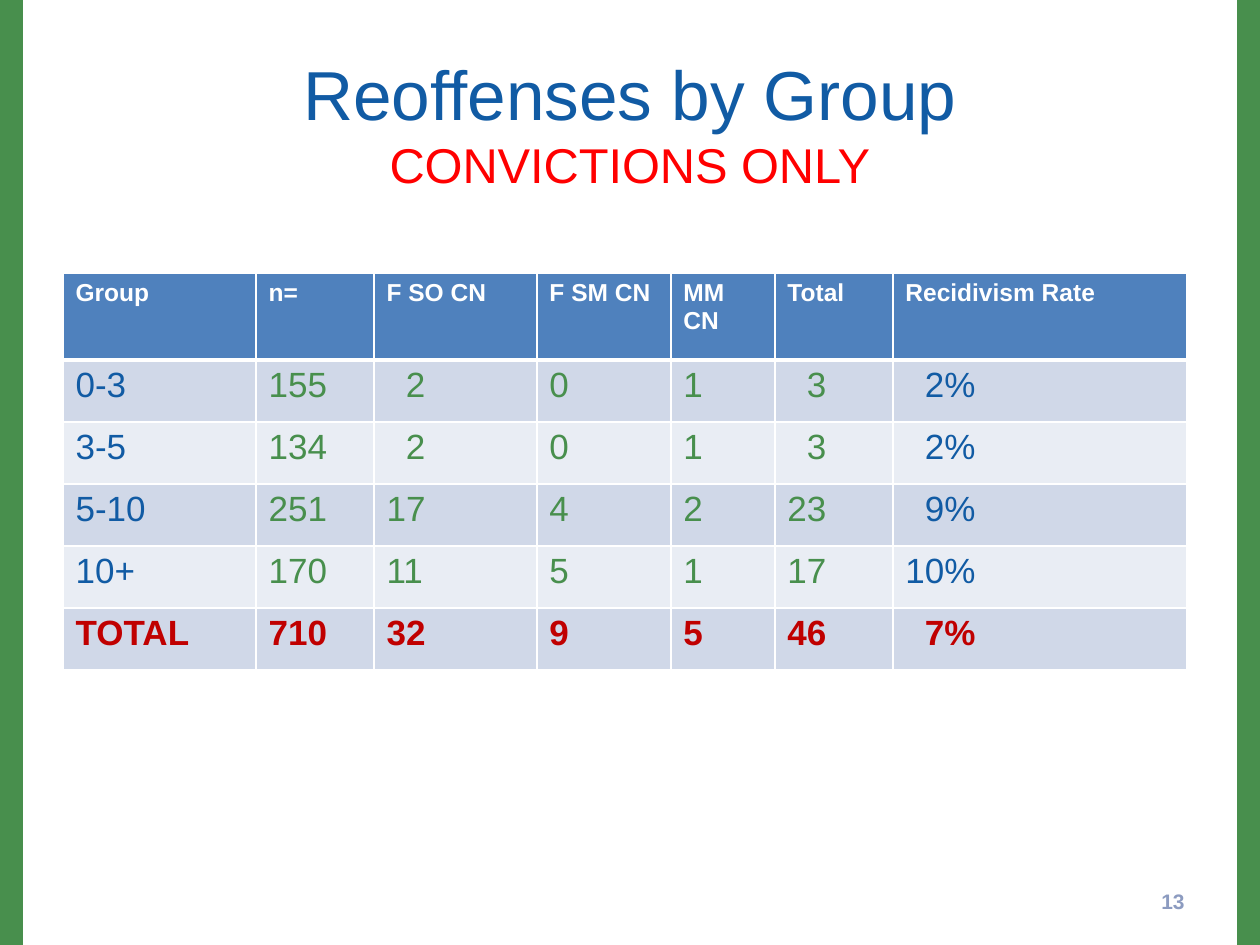
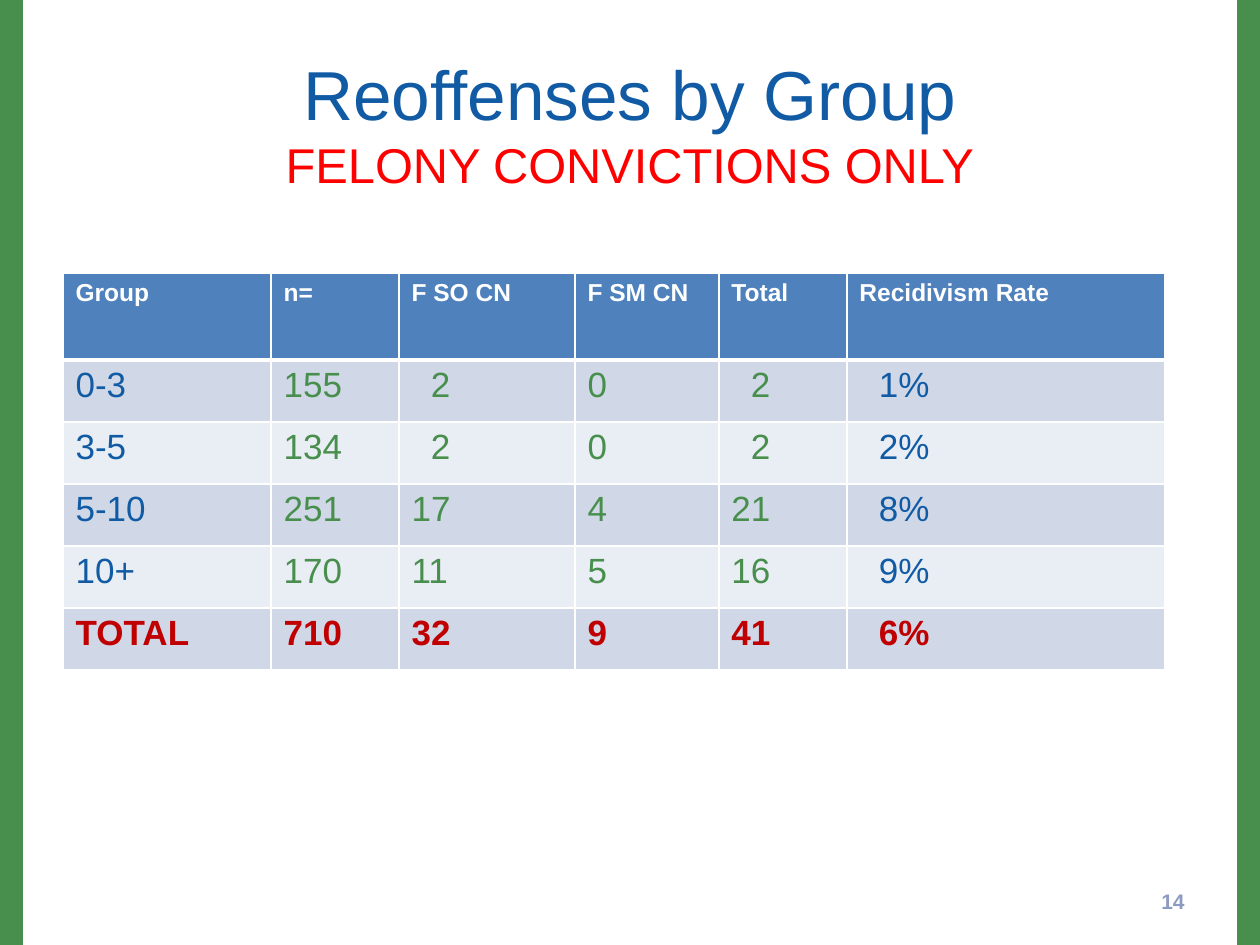
from dataclasses import dataclass

from lxml.etree import SubElement as Sub
from pptx import Presentation as Deck
from pptx.dml.color import RGBColor as RGB
from pptx.enum.shapes import MSO_SHAPE as Kind
from pptx.enum.text import MSO_ANCHOR as Anchor, MSO_AUTO_SIZE as Fit, PP_ALIGN as Align
from pptx.oxml.ns import qn
from pptx.util import Emu, Pt

SCALE = 914400 / 126
WIDE, HIGH = 1260, 945
FONT = "Arial"
COLORS = {
    "green": "488F4D",
    "blue": "115BA4",
    "red": "FF0000",
    "dark": "C00000",
    "head": "4F81BD",
    "odd": "D0D8E8",
    "even": "E9EDF4",
    "white": "FFFFFF",
    "page": "8C9BC0",
}
LEFT, TOP = 63, 273
HEAD_H, ROW_H = 87, 62
BAND = 21
INDENT = 32
PADDED = {"F SO CN", "Total", "Recidivism Rate"}


@dataclass(frozen=True)
class Page:
    num: int
    sub: str
    cols: tuple[int, ...]
    rows: tuple[tuple[str, ...], ...]


PAGES = (
    Page(13, "CONVICTIONS ONLY", (193, 118, 163, 134, 104, 118, 294), (
        ("Group", "n=", "F SO CN", "F SM CN", "MM CN", "Total", "Recidivism Rate"),
        ("0-3", "155", "2", "0", "1", "3", "2%"),
        ("3-5", "134", "2", "0", "1", "3", "2%"),
        ("5-10", "251", "17", "4", "2", "23", "9%"),
        ("10+", "170", "11", "5", "1", "17", "10%"),
        ("TOTAL", "710", "32", "9", "5", "46", "7%"),
    )),
    Page(14, "FELONY CONVICTIONS ONLY", (208, 128, 176, 144, 128, 318), (
        ("Group", "n=", "F SO CN", "F SM CN", "Total", "Recidivism Rate"),
        ("0-3", "155", "2", "0", "2", "1%"),
        ("3-5", "134", "2", "0", "2", "2%"),
        ("5-10", "251", "17", "4", "21", "8%"),
        ("10+", "170", "11", "5", "16", "9%"),
        ("TOTAL", "710", "32", "9", "41", "6%"),
    )),
)


def px(size: int) -> Emu:
    return Emu(round(size * SCALE))


def tint(name: str) -> RGB:
    return RGB.from_string(COLORS[name])


def style(font, size: float, color: str, bold: bool = False) -> None:
    font.name = FONT
    font.size = Pt(size)
    font.bold = bold
    font.color.rgb = tint(color)


def add_bands(slide) -> None:
    for left in (0, WIDE - BAND):
        band = slide.shapes.add_shape(Kind.RECTANGLE, px(left), 0, px(BAND), px(HIGH))
        band.shadow.inherit = False
        band.fill.solid()
        band.fill.fore_color.rgb = tint("green")
        band.line.color.rgb = tint("green")
        band.line.width = Pt(2)


def add_title(slide, sub: str) -> None:
    title = slide.shapes.title
    title.left, title.top = px(LEFT), px(38)
    title.width, title.height = px(1134), px(157)
    frame = title.text_frame
    frame.auto_size = Fit.NONE
    frame.vertical_anchor = Anchor.MIDDLE
    frame.margin_top = px(18)
    para = frame.paragraphs[0]
    para.alignment = Align.CENTER
    style(para.font, 39.6, "blue")
    para.add_run().text = "Reoffenses by Group"
    para.add_line_break()
    run = para.add_run()
    run.text = sub
    run.font.size = Pt(27.9)
    run.font.color.rgb = tint("red")


def add_edges(cell, top: int, base: int) -> None:
    props = cell._tc.get_or_add_tcPr()
    for side, width in (("L", 1), ("R", 1), ("T", top), ("B", base)):
        edge = Sub(props, qn(f"a:ln{side}"), w=str(Pt(width)))
        fill = Sub(edge, qn("a:solidFill"))
        Sub(fill, qn("a:srgbClr"), val=COLORS["white"])


def cell_look(row: int, col: int, page: Page) -> tuple[str, str]:
    if row == 0:
        return "head", "white"
    fill = "odd" if row % 2 else "even"
    if row == len(page.rows) - 1:
        return fill, "dark"
    return fill, "blue" if col in (0, len(page.cols) - 1) else "green"


def add_grid(slide, page: Page) -> None:
    count = len(page.rows)
    high = HEAD_H + ROW_H * (count - 1)
    grid = slide.shapes.add_table(
        count, len(page.cols), px(LEFT), px(TOP), px(sum(page.cols)), px(high)
    ).table
    for col, width in enumerate(page.cols):
        grid.columns[col].width = px(width)
    for row, texts in enumerate(page.rows):
        grid.rows[row].height = px(ROW_H if row else HEAD_H)
        for col, text in enumerate(texts):
            cell = grid.cell(row, col)
            add_edges(cell, 3 if row == 1 else 1, 1 if row else 3)
            fill, color = cell_look(row, col, page)
            cell.fill.solid()
            cell.fill.fore_color.rgb = tint(fill)
            cell.text = text
            if page.rows[0][col] in PADDED and len(text.rstrip("%")) == 1:
                cell.margin_left = px(INDENT)
            para = cell.text_frame.paragraphs[0]
            style(para.font, 20 if row else 14, color, row in (0, count - 1))


def add_number(slide, num: int) -> None:
    frame = slide.shapes.add_textbox(px(903), px(876), px(294), px(50)).text_frame
    frame.word_wrap = True
    frame.vertical_anchor = Anchor.MIDDLE
    para = frame.paragraphs[0]
    para.text = str(num)
    para.alignment = Align.RIGHT
    style(para.font, 12, "page", True)


def main() -> None:
    deck = Deck()
    deck.slide_width, deck.slide_height = px(WIDE), px(HIGH)
    for page in PAGES:
        slide = deck.slides.add_slide(deck.slide_layouts[5])
        add_bands(slide)
        add_title(slide, page.sub)
        add_grid(slide, page)
        add_number(slide, page.num)
    deck.save("out.pptx")


if __name__ == "__main__":
    main()
